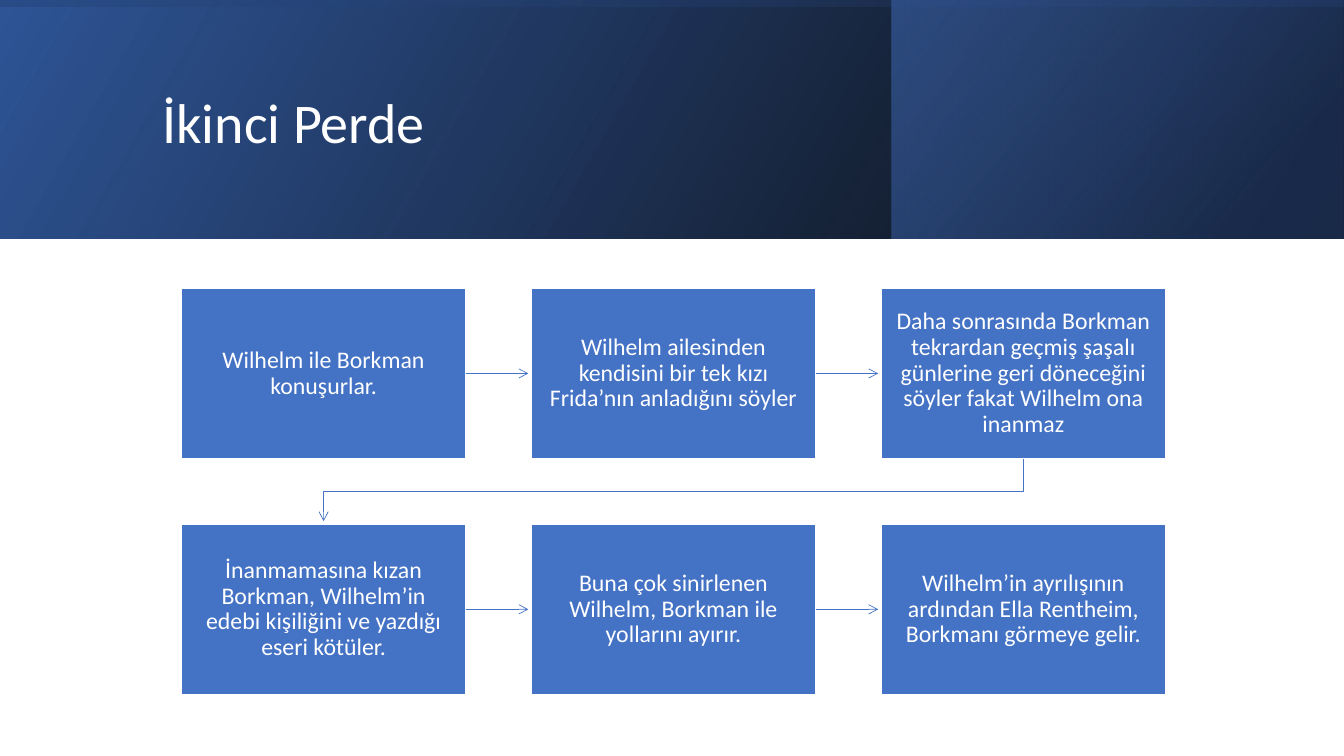
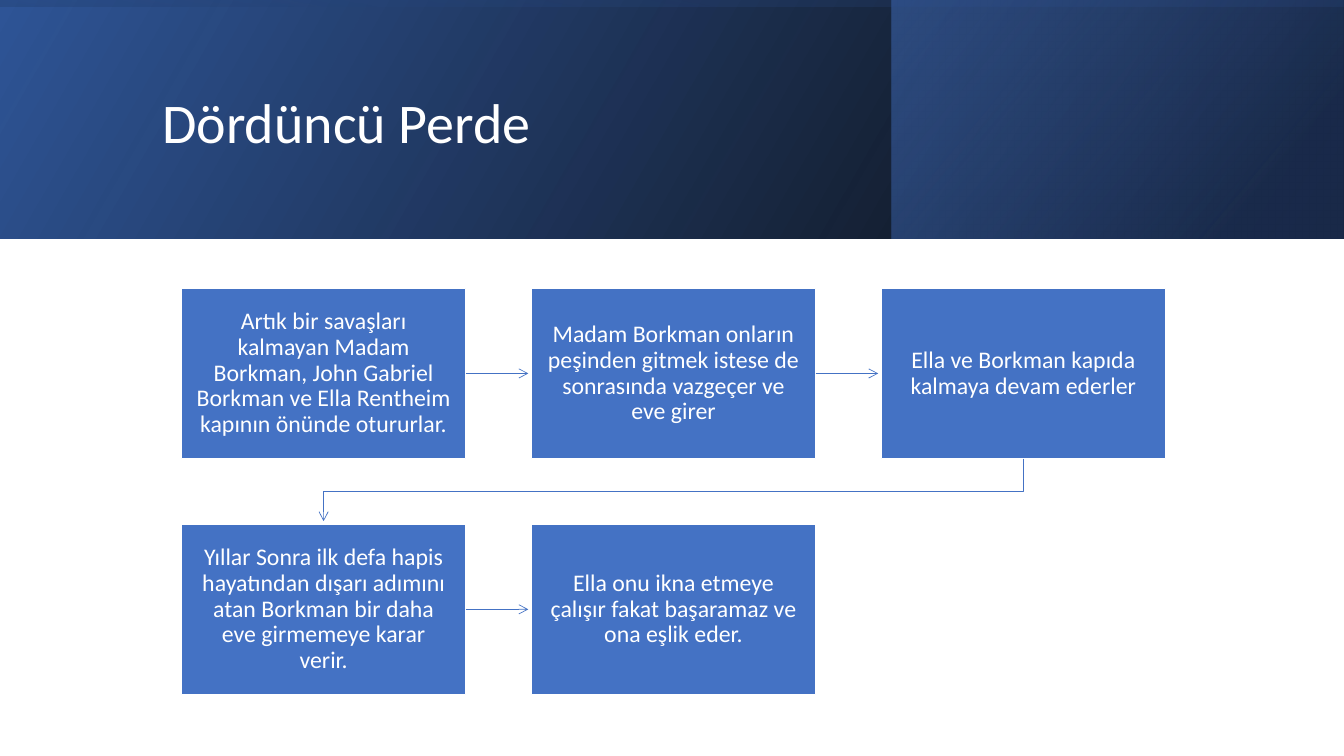
import dataclasses

import pptx
import pptx.dml.color
import pptx.enum.dml
import pptx.enum.shapes
import pptx.enum.text
import pptx.oxml.ns
import pptx.util
from lxml import etree

Inches = pptx.util.Inches
Pt = pptx.util.Pt
qn = pptx.oxml.ns.qn


@dataclasses.dataclass(frozen=True)
class Theme:
    font: str = "Calibri"
    white: str = "FFFFFF"
    black: str = "000000"
    blue: str = "4472C4"
    deep: str = "2F5597"
    navy: str = "203864"
    head: int = 40
    body: int = 17
    rule: float = 0.5
    edge: float = 1


THEME = Theme()
WIDE, HIGH, BAND = 13.33, 7.5, 2.37

# Header bands: place, rotation, clockwise angle, stops (position, colour, opacity)
BANDS = [
    ((0, 0, WIDE, BAND), 0, 330,
     [(0, THEME.black, 96), (100, THEME.deep, 100)]),
    ((8.84, 0, 4.48, BAND), 0, 320,
     [(19, THEME.navy, 68), (100, THEME.blue, 48)]),
    (((WIDE - BAND) / 2, (BAND - WIDE) / 2, BAND, WIDE), 270, 350,
     [(23, THEME.deep, 16), (99, THEME.black, 45)]),
]

# Flow grid
COLS = 3
LEFT, TOP = 1.8, 2.86
BOX_W, BOX_H = 2.82, 1.69
STEP_X, STEP_Y = 3.47, 2.34
GAP = 0.03  # space between an arrowhead and the next box

ACTS = [
    ("İkinci Perde", [
        "Wilhelm ile Borkman konuşurlar.",
        "Wilhelm ailesinden kendisini bir tek kızı Frida’nın anladığını söyler",
        "Daha sonrasında Borkman tekrardan geçmiş şaşalı günlerine geri "
        "döneceğini söyler fakat Wilhelm ona inanmaz",
        "İnanmamasına kızan Borkman, Wilhelm’in edebi kişiliğini ve yazdığı "
        "eseri kötüler.",
        "Buna çok sinirlenen Wilhelm, Borkman ile yollarını ayırır.",
        "Wilhelm’in ayrılışının ardından Ella Rentheim, Borkmanı görmeye gelir.",
    ]),
    ("Dördüncü Perde", [
        "Artık bir savaşları kalmayan Madam Borkman, John Gabriel Borkman ve "
        "Ella Rentheim kapının önünde otururlar.",
        "Madam Borkman onların peşinden gitmek istese de sonrasında vazgeçer "
        "ve eve girer",
        "Ella ve Borkman kapıda kalmaya devam ederler",
        "Yıllar Sonra ilk defa hapis hayatından dışarı adımını atan Borkman "
        "bir daha eve girmemeye karar verir.",
        "Ella onu ikna etmeye çalışır fakat başaramaz ve ona eşlik eder.",
    ]),
]


def rgb(code):
    return pptx.dml.color.RGBColor.from_string(code)


def add_rect(slide, place):
    shape = slide.shapes.add_shape(
        pptx.enum.shapes.MSO_SHAPE.RECTANGLE, *map(Inches, place))
    shape.shadow.inherit = False
    return shape


def write(frame, text, size, align):
    """Set one centred-in-height paragraph in the theme's type."""
    frame.text = text
    frame.word_wrap = True
    frame.auto_size = pptx.enum.text.MSO_AUTO_SIZE.NONE
    frame.vertical_anchor = pptx.enum.text.MSO_ANCHOR.MIDDLE
    para = frame.paragraphs[0]
    para.alignment = align
    para.line_spacing = 0.9
    font = para.runs[0].font
    font.name, font.size = THEME.font, Pt(size)
    font.color.rgb = rgb(THEME.white)


def add_band(slide, place, turn, angle, stops):
    band = add_rect(slide, place)
    band.rotation = turn
    band.line.fill.background()
    band.fill.gradient()
    band.fill.gradient_angle = 360 - angle
    for stop, (pos, code, _) in zip(band.fill.gradient_stops, stops):
        stop.position = pos / 100
        stop.color.rgb = rgb(code)
    # Mirroring and opacity
    props = band.element.spPr
    props.find(qn("a:xfrm")).set("flipH", "1")
    for color, (_, _, alpha) in zip(props.iter(qn("a:srgbClr")), stops):
        etree.SubElement(color, qn("a:alpha"), val=str(alpha * 1000))


def add_title(slide, text):
    title = slide.shapes.title
    title.left, title.top = Inches(1.51), Inches(0.38)
    title.width, title.height = Inches(10.63), Inches(1.72)
    write(title.text_frame, text, THEME.head, pptx.enum.text.PP_ALIGN.LEFT)
    # Bring the title in front of the bands
    title.element.getparent().append(title.element)


def add_box(slide, index, text):
    row, col = divmod(index, COLS)
    box = add_rect(
        slide, (LEFT + col * STEP_X, TOP + row * STEP_Y, BOX_W, BOX_H))
    box.fill.solid()
    box.fill.fore_color.rgb = rgb(THEME.blue)
    box.line.color.rgb = rgb(THEME.white)
    box.line.width = Pt(THEME.edge)
    frame = box.text_frame
    frame.margin_left = frame.margin_right = Inches(0.14)
    frame.margin_top = frame.margin_bottom = Inches(0.15)
    write(frame, text, THEME.body, pptx.enum.text.PP_ALIGN.CENTER)
    return box


def style_arrow(line):
    line.line.color.rgb = rgb(THEME.blue)
    line.line.width = Pt(THEME.rule)
    stroke = line.element.spPr.find(qn("a:ln"))
    etree.SubElement(stroke, qn("a:tailEnd"), type="arrow")


def add_arrow(slide, start, end):
    """Arrow from one box to its right-hand neighbour."""
    mid = start.top + start.height // 2
    arrow = slide.shapes.add_connector(
        pptx.enum.shapes.MSO_CONNECTOR.STRAIGHT,
        start.left + start.width, mid, end.left - Inches(GAP), mid)
    arrow.begin_connect(start, 3)
    style_arrow(arrow)
    etree.SubElement(arrow.element.spPr, qn("a:effectLst"))


def add_turn(slide, start, end):
    """Bent arrow from the end of one row to the start of the next."""
    x1, x2 = (box.left + box.width // 2 for box in (start, end))
    y1, y2 = start.top + start.height, end.top
    mid = (y1 + y2) // 2
    pen = slide.shapes.build_freeform(x1, y1)
    pen.add_line_segments(
        [(x1, mid), (x2, mid), (x2, y2 - Inches(GAP))], close=False)
    turn = pen.convert_to_shape()
    turn.shadow.inherit = False
    turn.fill.background()
    style_arrow(turn)


def add_flow(slide, texts):
    boxes = [add_box(slide, i, text) for i, text in enumerate(texts)]
    for i, (start, end) in enumerate(zip(boxes, boxes[1:]), 1):
        join = add_arrow if i % COLS else add_turn
        join(slide, start, end)


def main():
    deck = pptx.Presentation()
    deck.slide_width, deck.slide_height = Inches(WIDE), Inches(HIGH)
    layout = deck.slide_layouts.get_by_name("Title Only")
    for title, texts in ACTS:
        slide = deck.slides.add_slide(layout)
        for band in BANDS:
            add_band(slide, *band)
        add_title(slide, title)
        add_flow(slide, texts)
    deck.save("out.pptx")


if __name__ == "__main__":
    main()
